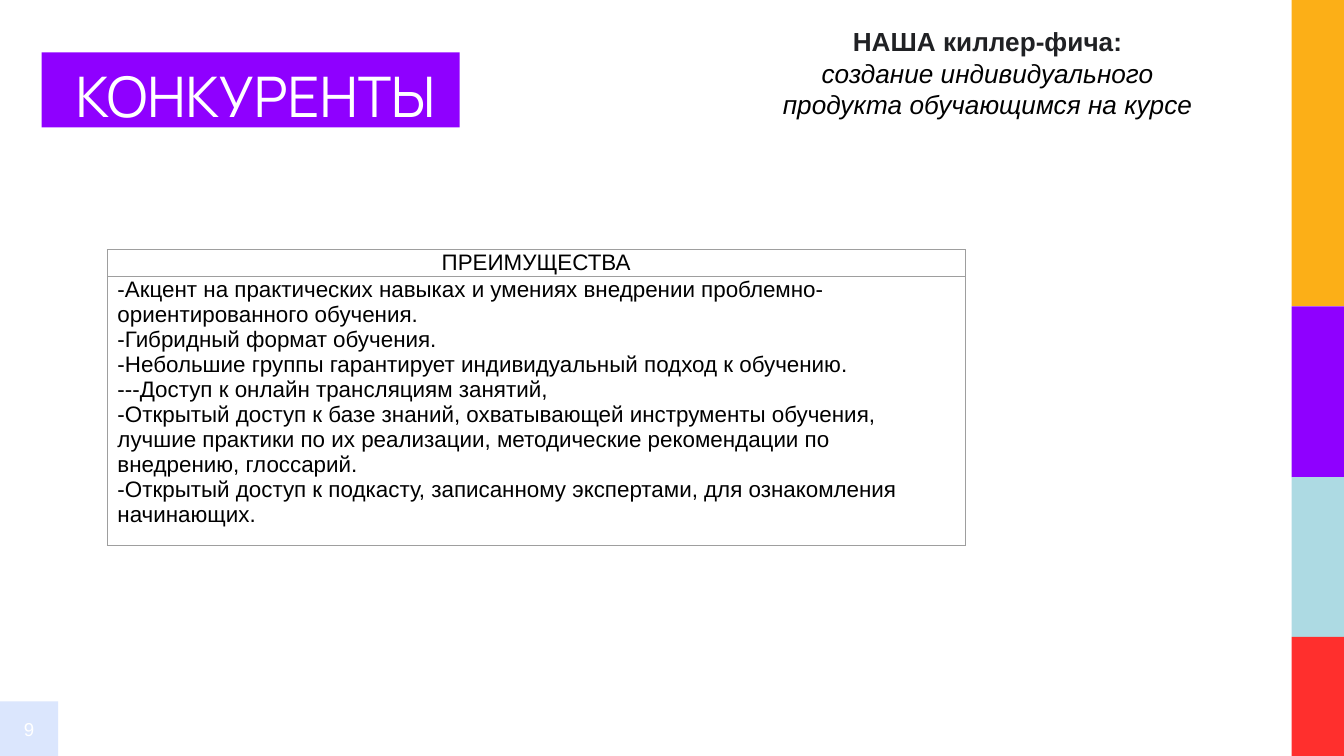
from lxml import etree
from pptx import Presentation
from pptx.dml.color import RGBColor
from pptx.enum.shapes import MSO_SHAPE
from pptx.enum.text import MSO_ANCHOR, PP_ALIGN
from pptx.oxml.ns import qn
from pptx.util import Cm, Pt

RECT = MSO_SHAPE.RECTANGLE
MIDDLE = MSO_ANCHOR.MIDDLE
LEFT, CENTER = PP_ALIGN.LEFT, PP_ALIGN.CENTER

COLORS = {
    "white": "FFFFFF",
    "black": "000000",
    "dark": "202124",
    "grid": "9E9E9E",
    "badge": "DBE6FD",
    "violet": "8F00FF",
    "orange": "FCAF17",
    "aqua": "ADDAE3",
    "red": "FF2F2D",
}
WIDTH, HEIGHT = 25.4, 14.29
BAR = 0.99

STRIPES = [("orange", 5.79), ("violet", 3.23), ("aqua", 3.02), ("red", 2.25)]
FEATURE = [
    ("НАША киллер-фича:", "dark", True, False),
    ("создание индивидуального", "black", False, True),
    ("продукта обучающимся на курсе", "black", False, True),
]
HEAD = "ПРЕИМУЩЕСТВА"
MERITS = [
    "-Акцент на практических навыках и умениях внедрении "
    "проблемно-ориентированного обучения.",
    "-Гибридный формат обучения.",
    "-Небольшие группы гарантирует индивидуальный подход к обучению.",
    "---Доступ к онлайн трансляциям занятий,",
    "-Открытый доступ к базе знаний, охватывающей инструменты обучения, "
    "лучшие практики по их реализации, методические рекомендации по "
    "внедрению, глоссарий.",
    "-Открытый доступ к подкасту, записанному экспертами, "
    "для ознакомления начинающих.",
]


def rgb(name):
    return RGBColor.from_string(COLORS[name])


def add_run(para, text, size, color, font="Arial", bold=False, italic=False):
    run = para.add_run()
    run.text = text
    run.font.size = Pt(size)
    run.font.name = font
    run.font.bold = bold
    run.font.italic = italic
    run.font.color.rgb = rgb(color)


def next_para(frame, index, align):
    """Return the first paragraph for index 0, otherwise a new one."""
    para = frame.add_paragraph() if index else frame.paragraphs[0]
    para.alignment = align
    return para


def set_insets(frame, side, edge):
    frame.margin_left = frame.margin_right = Cm(side)
    frame.margin_top = frame.margin_bottom = Cm(edge)


def add_block(slide, color, left, top, width, height):
    block = slide.shapes.add_shape(
        RECT, Cm(left), Cm(top), Cm(width), Cm(height))
    block.shadow.inherit = False
    block.fill.solid()
    block.fill.fore_color.rgb = rgb(color)
    block.line.fill.background()
    return block


def add_stripes(slide):
    top = 0
    for color, height in STRIPES:
        add_block(slide, color, WIDTH - BAR, top, BAR, height)
        top += height


def add_badge(slide):
    badge = add_block(slide, "badge", 0, 13.26, 1.1, 1.03)
    frame = badge.text_frame
    set_insets(frame, 0, 0)
    frame.vertical_anchor = MIDDLE
    add_run(next_para(frame, 0, CENTER), "9", 10, "white")


def add_title(slide):
    add_block(slide, "violet", 0.79, 0.99, 7.9, 1.42)
    title = slide.shapes.title
    title.left, title.top = Cm(1.27), Cm(0.99)
    title.width, title.height = Cm(7.9), Cm(1.6)
    frame = title.text_frame
    set_insets(frame, 0.16, 0.16)
    frame.vertical_anchor = MIDDLE
    add_run(next_para(frame, 0, LEFT), "КОНКУРЕНТЫ", 30, "white", "Manrope")
    # The placeholder comes first in the tree: bring it above its band.
    slide.shapes._spTree.append(title._element)


def add_feature(slide):
    box = slide.shapes.add_textbox(Cm(14.5), Cm(0.36), Cm(8.33), Cm(2.06))
    frame = box.text_frame
    frame.word_wrap = False
    for i, (text, color, bold, italic) in enumerate(FEATURE):
        para = next_para(frame, i, CENTER)
        add_run(para, text, 14, color, bold=bold, italic=italic)


def set_borders(cell):
    props = cell._tc.get_or_add_tcPr()
    for side in ("lnL", "lnR", "lnT", "lnB"):
        line = etree.SubElement(props, qn("a:" + side), w=str(Pt(0.75)))
        fill = etree.SubElement(line, qn("a:solidFill"))
        etree.SubElement(fill, qn("a:srgbClr"), val=COLORS["grid"])


def fill_cell(cell, lines, align):
    set_borders(cell)
    cell.fill.background()
    set_insets(cell, 0.19, 0)
    for i, text in enumerate(lines):
        add_run(next_para(cell.text_frame, i, align), text, 12, "black")


def add_merits(slide):
    rows = [([HEAD], CENTER, 0.51), (MERITS, LEFT, 5.08)]
    total = sum(height for _, _, height in rows)
    table = slide.shapes.add_table(
        len(rows), 1, Cm(2.03), Cm(4.72), Cm(16.21), Cm(total)).table
    table.first_row = table.horz_banding = False
    for i, (lines, align, height) in enumerate(rows):
        table.rows[i].height = Cm(height)
        fill_cell(table.cell(i, 0), lines, align)


def main():
    deck = Presentation()
    deck.slide_width, deck.slide_height = Cm(WIDTH), Cm(HEIGHT)
    slide = deck.slides.add_slide(deck.slide_layouts[5])
    add_badge(slide)
    add_title(slide)
    add_stripes(slide)
    add_merits(slide)
    add_feature(slide)
    deck.save("out.pptx")


if __name__ == "__main__":
    main()
